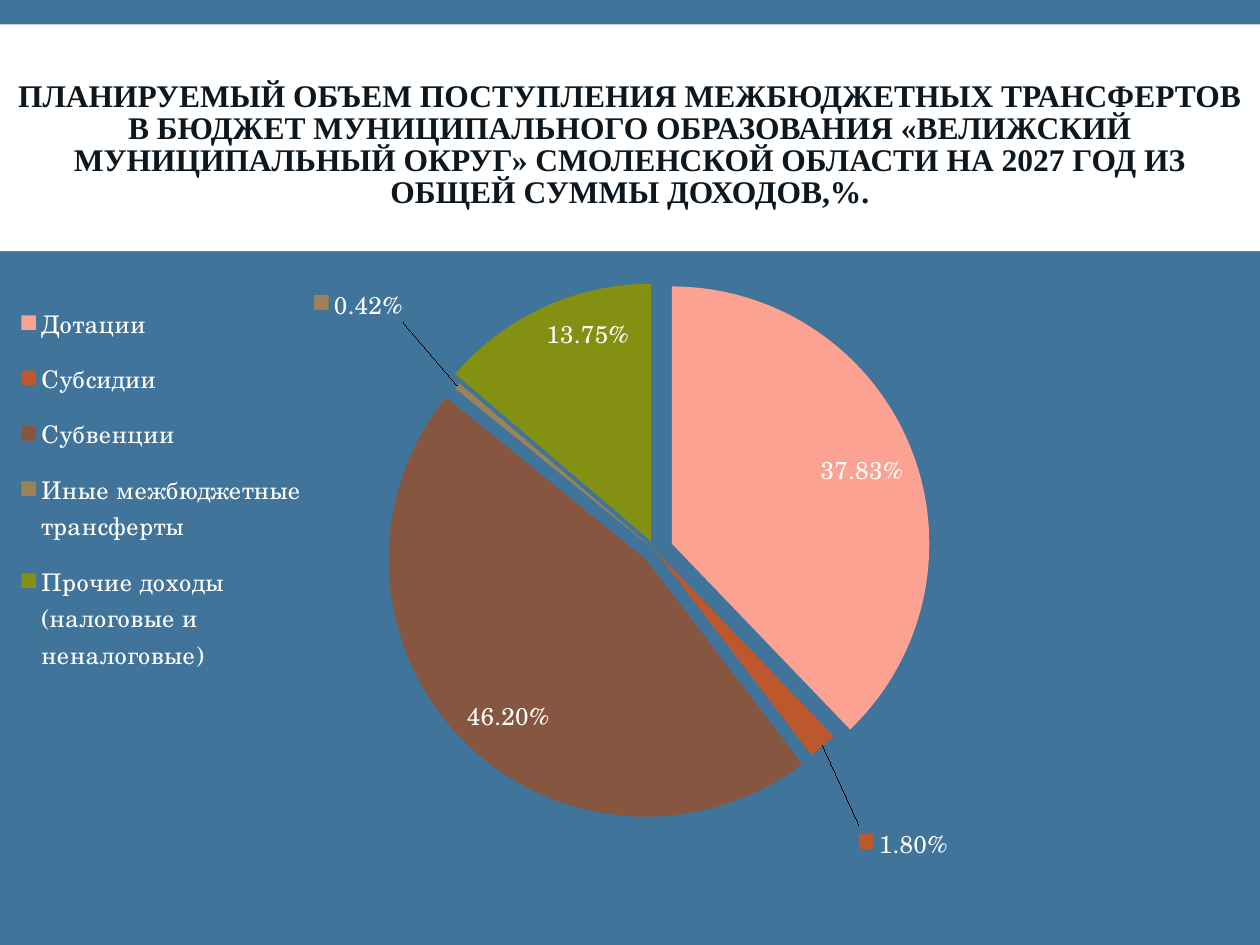
from lxml import etree
from pptx import Presentation
from pptx import util as u
from pptx.chart.data import CategoryChartData
from pptx.dml.color import RGBColor
from pptx.enum import chart as charts, shapes, text
from pptx.oxml import parse_xml
from pptx.oxml.ns import nsdecls, qn

TITLE = ("ПЛАНИРУЕМЫЙ ОБЪЕМ ПОСТУПЛЕНИЯ МЕЖБЮДЖЕТНЫХ ТРАНСФЕРТОВ "
         "В БЮДЖЕТ МУНИЦИПАЛЬНОГО ОБРАЗОВАНИЯ «ВЕЛИЖСКИЙ МУНИЦИПАЛЬНЫЙ ОКРУГ» "
         "СМОЛЕНСКОЙ ОБЛАСТИ НА 2027 ГОД ИЗ ОБЩЕЙ СУММЫ ДОХОДОВ,%.")
# name, share, colour, explosion in %, label shift as a fraction of the chart
REVENUES = [
    ("Дотации", 0.3783, "FBA293", 7, None),
    ("Субсидии", 0.018, "BD582C", 0, (0.105, 0.18)),
    ("Субвенции", 0.462, "865640", 5, None),
    ("Иные межбюджетные трансферты", 0.0042, "9B8357", 0, (-0.12, -0.155)),
    ("Прочие доходы (налоговые и неналоговые)", 0.1375, "849012", 4, None),
]
PLOT_AREA = (0.32, 0.061, 0.415, 0.762)
LEGEND_AREA = (0.005, 0.05, 0.25, 0.6)
PERCENT = "0.00%"
WHITE = "FFFFFF"


def color(value):
    return RGBColor.from_string(value)


def paint(part, value):
    part.fill.solid()
    part.fill.fore_color.rgb = color(value)


def style(font, size=13.9, name="TeX Gyre Schola", ink=WHITE, bold=False):
    font.size, font.name, font.bold = u.Pt(size), name, bold
    font.color.rgb = color(ink)


def add_text(slide, content, box, spacing=1.0, **font):
    frame = slide.shapes.add_textbox(*map(u.Pt, box)).text_frame
    frame.word_wrap = True
    frame.vertical_anchor = text.MSO_ANCHOR.MIDDLE
    paragraph = frame.paragraphs[0]
    paragraph.alignment = text.PP_ALIGN.CENTER
    paragraph.line_spacing = spacing
    run = paragraph.add_run()
    run.text = content
    style(run.font, **font)


def manual_layout(**settings):
    layout = parse_xml(f"<c:layout {nsdecls('c')}><c:manualLayout/></c:layout>")
    for tag, value in settings.items():
        etree.SubElement(layout[0], qn(f"c:{tag}")).set("val", str(value))
    return layout


def area_layout(area, **target):
    x, y, w, h = area
    return manual_layout(**target, xMode="edge", yMode="edge", x=x, y=y, w=w, h=h)


def move_label(point, shift):
    """Shift one label off its slice and show its colour key."""
    label = point.data_label
    style(label.font)
    label.position = charts.XL_LABEL_POSITION.INSIDE_END
    element = point.data_label.font and label._get_or_add_dLbl()
    element.insert(1, manual_layout(x=shift[0], y=shift[1]))
    element.insert(2, parse_xml(
        f'<c:numFmt {nsdecls("c")} formatCode="{PERCENT}" sourceLinked="0"/>'))
    element.find(qn("c:showLegendKey")).set("val", "1")


def add_pie(slide, box):
    data = CategoryChartData(number_format=PERCENT)
    data.categories = [row[0] for row in REVENUES]
    data.add_series("Series 1", [row[1] for row in REVENUES])
    pie = slide.shapes.add_chart(
        charts.XL_CHART_TYPE.PIE, *map(u.Pt, box), data).chart
    style(pie.font, size=10, name="Calibri")
    pie.has_title = False

    pie.has_legend = True
    legend = pie.legend
    legend.position = charts.XL_LEGEND_POSITION.BOTTOM
    legend.include_in_layout = False
    style(legend.font)
    for old in legend._element.findall(qn("c:layout")):
        legend._element.remove(old)
    legend._element.find(qn("c:legendPos")).addnext(area_layout(LEGEND_AREA))

    plot_area = pie._chartSpace.chart.plotArea
    for old in plot_area.findall(qn("c:layout")):
        plot_area.remove(old)
    plot_area.insert(0, area_layout(PLOT_AREA, layoutTarget="inner"))

    pie.plots[0].vary_by_categories = True
    series = pie.plots[0].series[0]
    labels = series.data_labels
    labels.show_value = True
    labels.number_format, labels.number_format_is_linked = PERCENT, False
    labels.position = charts.XL_LABEL_POSITION.INSIDE_END
    style(labels.font)
    for index, (_, _, fill, explosion, shift) in enumerate(REVENUES):
        point = series.points[index]
        paint(point.format, fill)
        if explosion:
            point.format.fill._xPr.addprevious(parse_xml(
                f'<c:explosion {nsdecls("c")} val="{explosion}"/>'))
        if shift:
            move_label(point, shift)


def main():
    deck = Presentation()
    deck.slide_width, deck.slide_height = u.Pt(720), u.Pt(540)
    slide = deck.slides.add_slide(deck.slide_layouts[6])
    paint(slide.background, "40749B")

    band = slide.shapes.add_shape(
        shapes.MSO_SHAPE.RECTANGLE, *map(u.Pt, (0, 14, 720, 129.5)))
    band.shadow.inherit = False
    paint(band, WHITE)
    band.line.fill.background()

    add_text(slide, TITLE, (0, 41.5, 720, 83.5), spacing=0.85, size=18,
             name="Times New Roman", ink="0D171F", bold=True)
    add_pie(slide, (0, 144, 710, 386))
    deck.save("out.pptx")


if __name__ == "__main__":
    main()
